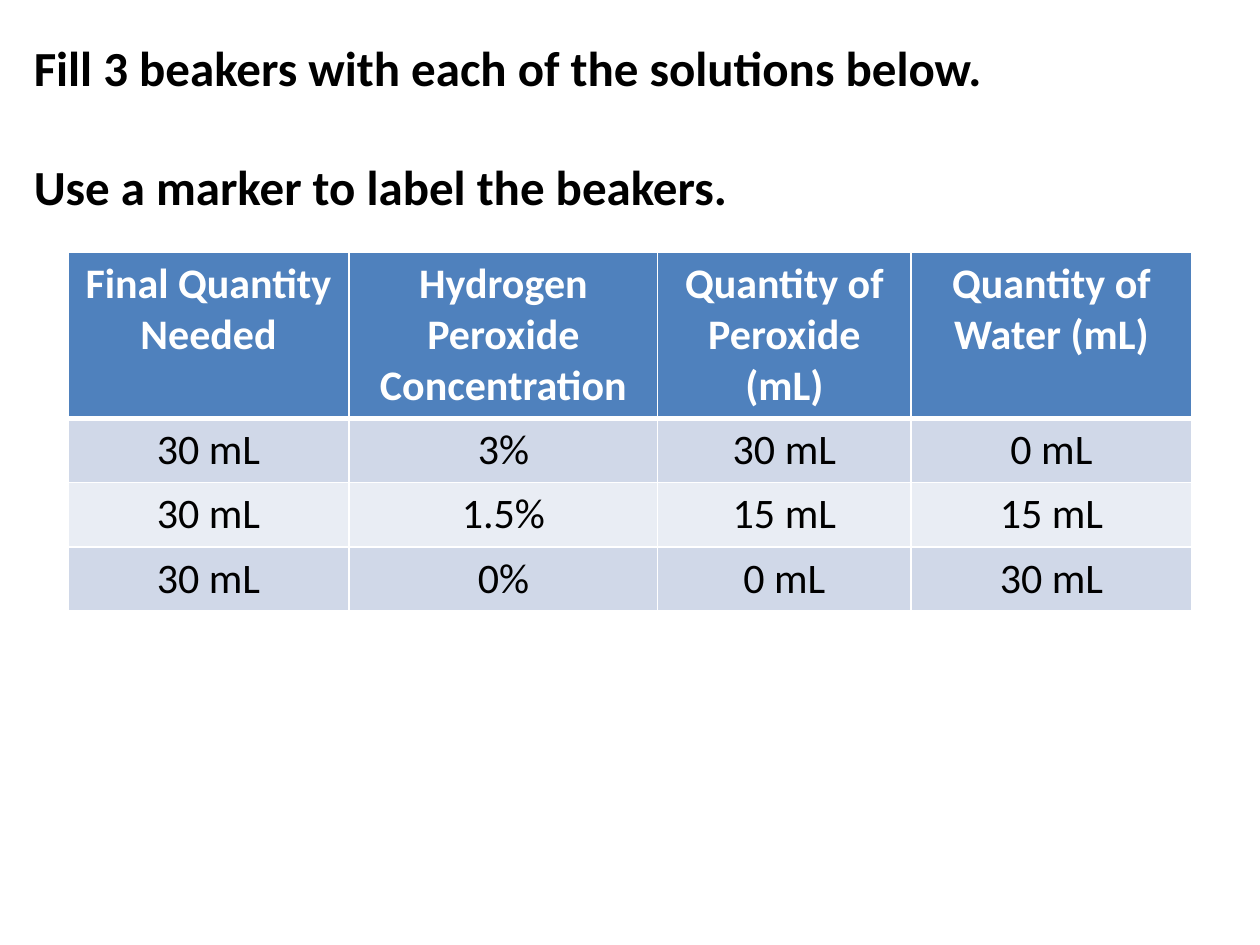
from dataclasses import dataclass

from lxml import etree
from pptx import Presentation, util as u
from pptx.dml.color import RGBColor
from pptx.enum import text
from pptx.oxml.ns import qn

INSTRUCTIONS = [
    "Fill 3 beakers with each of the solutions below.",
    "Use a marker to label the beakers.",
]
# \v is a line break inside a paragraph
SOLUTIONS = [
    ("Final Quantity\vNeeded", "Hydrogen Peroxide\vConcentration",
     "Quantity of\vPeroxide (mL)", "Quantity of Water (mL)"),
    ("30 mL", "3%", "30 mL", "0 mL"),
    ("30 mL", "1.5%", "15 mL", "15 mL"),
    ("30 mL", "0%", "0 mL", "30 mL"),
]

SLIDE_SIZE = 10, 7.5
INSTRUCTIONS_BOX = 0.17, 0.25, 9.67, 1.51
TABLE_LEFT, TABLE_TOP = 0.54, 2
COLUMN_WIDTHS = 2.23, 2.45, 2.01, 2.23
HEADER_HEIGHT, BODY_HEIGHT = 1.31, 0.51


@dataclass(frozen=True)
class Theme:
    font: str = "Calibri"
    instruction_size: int = 28
    table_size: int = 24
    line_gap: int = 34
    ink: str = "000000"
    header_ink: str = "FFFFFF"
    header_fill: str = "4F81BD"
    band_fills: tuple = ("D0D8E8", "E9EDF4")
    border: str = "FFFFFF"
    border_width: int = 1
    header_rule_width: int = 3


THEME = Theme()


def style_font(paragraph, size, color, bold):
    font = paragraph.font
    font.name, font.size, font.bold = THEME.font, u.Pt(size), bold
    font.color.rgb = RGBColor.from_string(color)


def set_borders(cell, widths):
    """Draw cell borders; widths are points for left, right, top, bottom."""
    properties = cell._tc.get_or_add_tcPr()
    for position, (side, width) in enumerate(zip("LRTB", widths)):
        line = etree.Element(qn(f"a:ln{side}"), w=str(u.Pt(width)))
        fill = etree.SubElement(line, qn("a:solidFill"))
        etree.SubElement(fill, qn("a:srgbClr"), val=THEME.border)
        properties.insert(position, line)


def add_instructions(slide):
    shape = slide.shapes.add_textbox(*map(u.Inches, INSTRUCTIONS_BOX))
    frame = shape.text_frame
    frame.word_wrap = True
    frame.text = "\n".join(INSTRUCTIONS)
    for paragraph in frame.paragraphs:
        style_font(paragraph, THEME.instruction_size, THEME.ink, True)
    frame.paragraphs[0].space_after = u.Pt(THEME.line_gap)


def add_solutions_table(slide):
    row_heights = [HEADER_HEIGHT] + [BODY_HEIGHT] * (len(SOLUTIONS) - 1)
    table = slide.shapes.add_table(
        len(SOLUTIONS), len(COLUMN_WIDTHS),
        u.Inches(TABLE_LEFT), u.Inches(TABLE_TOP),
        u.Inches(sum(COLUMN_WIDTHS)), u.Inches(sum(row_heights))).table
    for column, width in zip(table.columns, COLUMN_WIDTHS):
        column.width = u.Inches(width)

    for r, (values, height) in enumerate(zip(SOLUTIONS, row_heights)):
        table.rows[r].height = u.Inches(height)
        header = r == 0
        fill = THEME.header_fill if header else THEME.band_fills[(r - 1) % 2]
        ink = THEME.header_ink if header else THEME.ink
        top = THEME.header_rule_width if r == 1 else THEME.border_width
        bottom = THEME.header_rule_width if header else THEME.border_width
        for c, value in enumerate(values):
            cell = table.cell(r, c)
            cell.text_frame.text = value
            cell.fill.solid()
            cell.fill.fore_color.rgb = RGBColor.from_string(fill)
            paragraph = cell.text_frame.paragraphs[0]
            paragraph.alignment = text.PP_ALIGN.CENTER
            style_font(paragraph, THEME.table_size, ink, header)
            set_borders(cell, (THEME.border_width, THEME.border_width, top, bottom))


def main():
    presentation = Presentation()
    presentation.slide_width, presentation.slide_height = map(u.Inches, SLIDE_SIZE)
    slide = presentation.slides.add_slide(presentation.slide_layouts[6])
    add_solutions_table(slide)
    add_instructions(slide)
    presentation.save("out.pptx")


if __name__ == "__main__":
    main()
